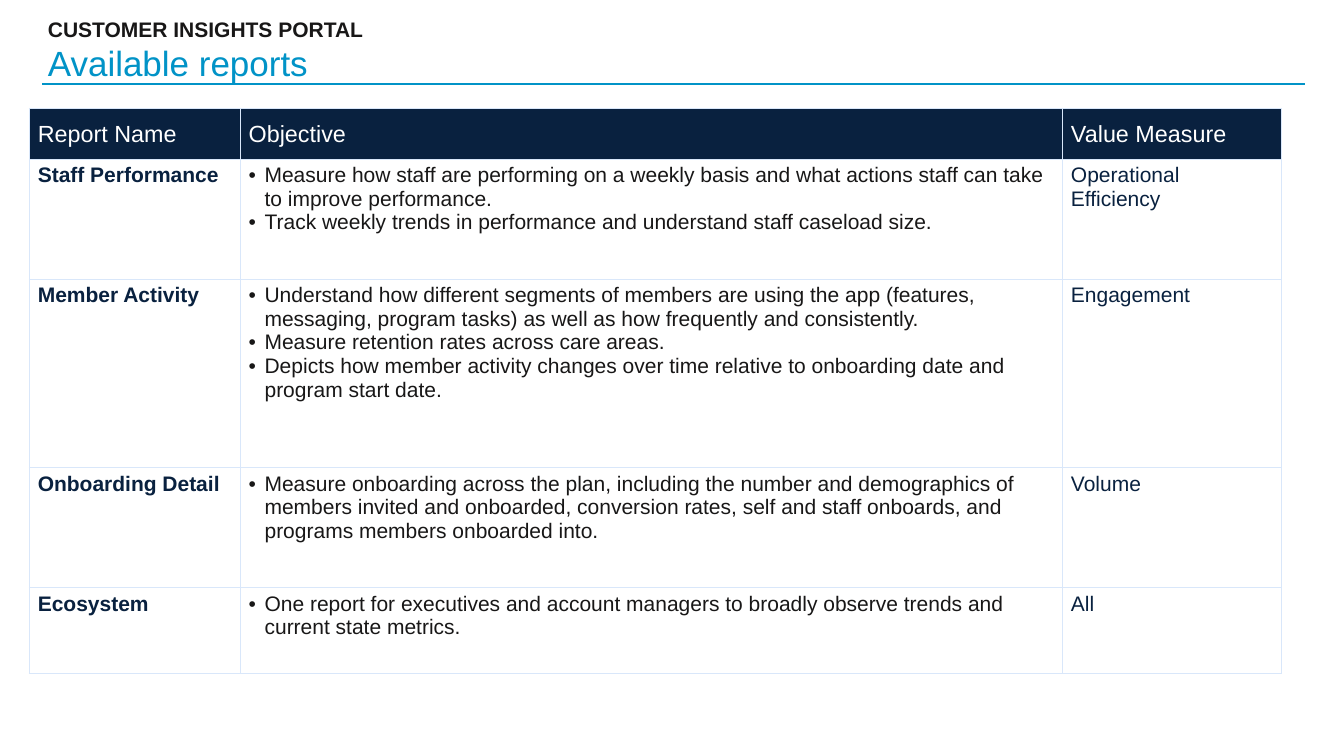
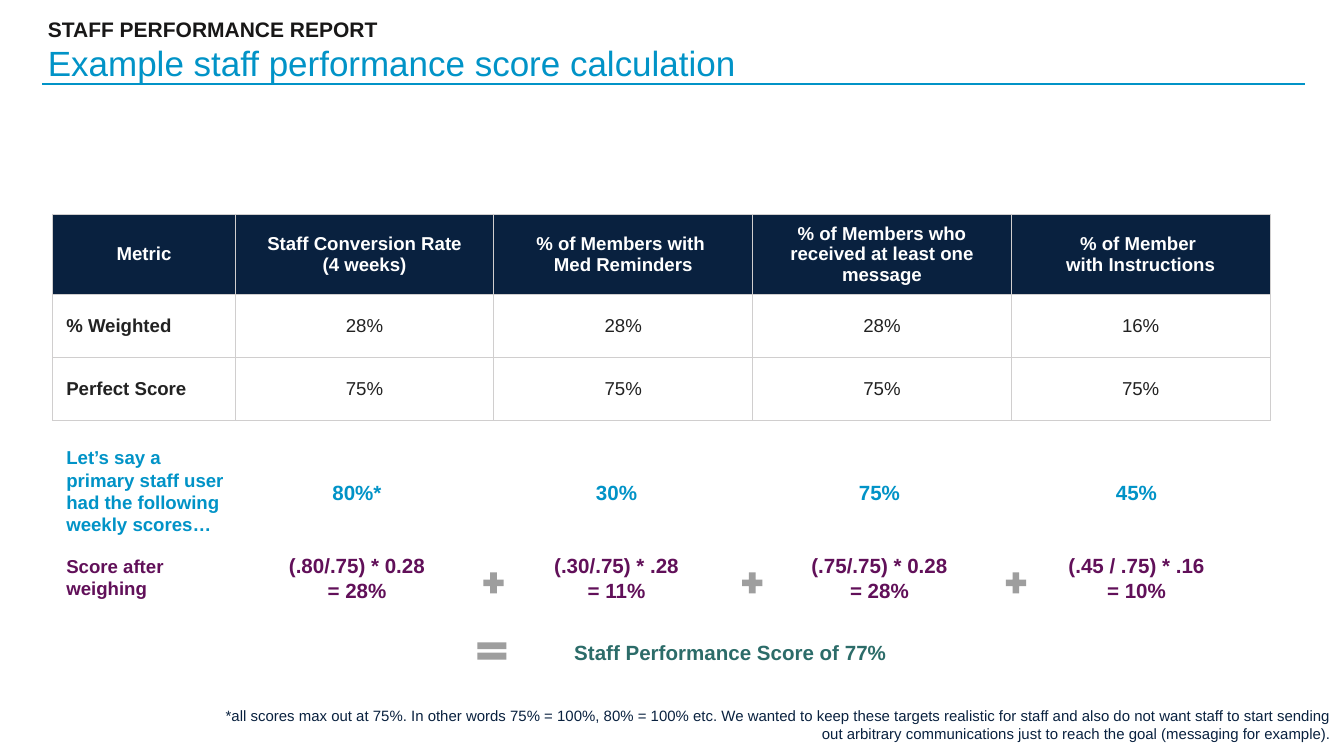
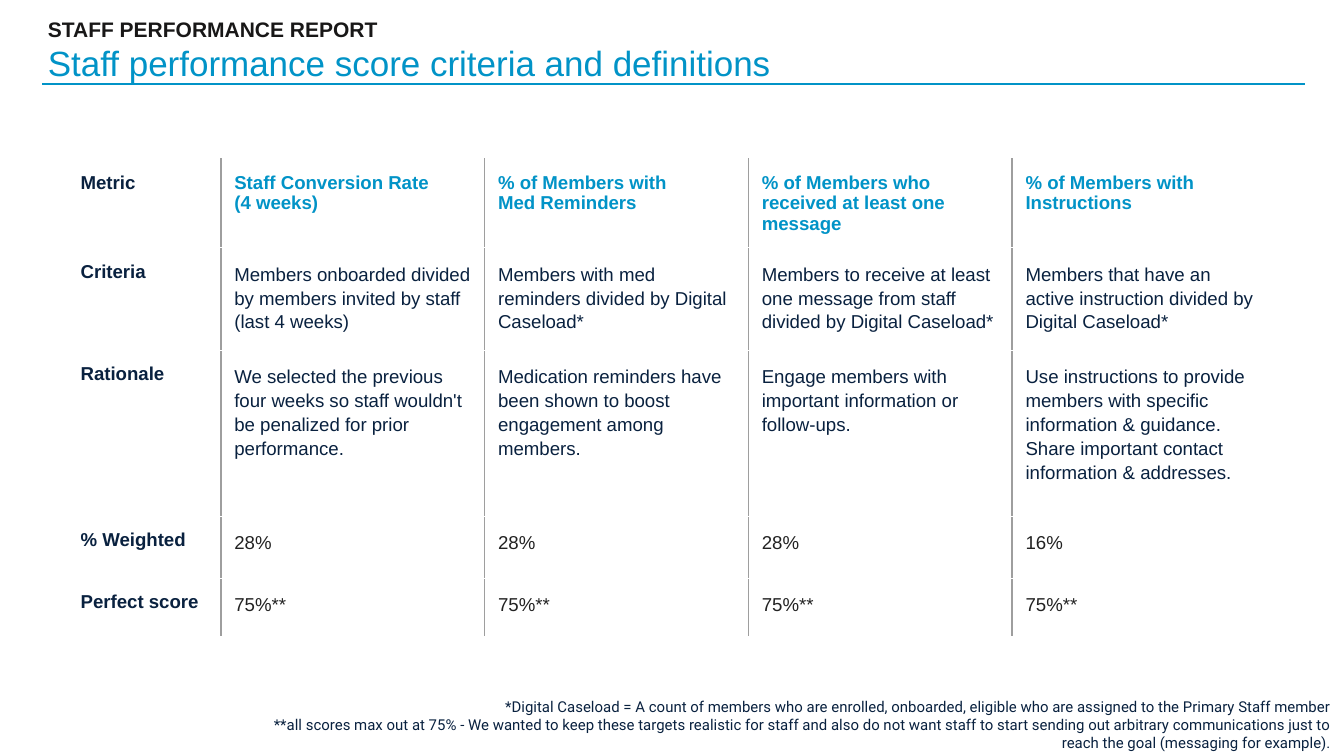
from collections.abc import Callable, Sequence
from copy import deepcopy
from dataclasses import dataclass

from lxml.etree import SubElement
from pptx import Presentation
from pptx.dml.color import RGBColor
from pptx.enum.shapes import MSO_CONNECTOR, MSO_SHAPE
from pptx.enum.text import MSO_ANCHOR, MSO_AUTO_SIZE, PP_ALIGN
from pptx.oxml.ns import qn
from pptx.presentation import Presentation as Deck
from pptx.slide import Slide
from pptx.table import _Cell as Cell
from pptx.text.text import TextFrame, _Paragraph as Paragraph
from pptx.util import Emu, Inches, Pt

GRID_COLUMNS = 16
GRID_ROWS = 9
SLIDE_WIDTH = Inches(16)
SLIDE_HEIGHT = Inches(9)


@dataclass(frozen=True)
class Theme:
    font: str = "Arial"
    note_font: str = "Roboto"
    ink: str = "181717"
    navy: str = "09213F"
    blue: str = "0193C7"
    plum: str = "611059"
    teal: str = "2C6C69"
    value: str = "222222"
    white: str = "FFFFFF"
    pale_blue: str = "D9E7FA"
    light_gray: str = "D0CECE"
    gray: str = "9E9E9E"
    title: float = 30
    heading: float = 20
    body: float = 18
    score: float = 17.6
    small: float = 16
    note: float = 12.8


THEME = Theme()


@dataclass(frozen=True)
class Area:
    left: float
    top: float
    width: float
    height: float

    def lengths(self) -> tuple[Emu, Emu, Emu, Emu]:
        return across(self.left), down(self.top), across(self.width), down(self.height)


@dataclass(frozen=True)
class Borders:
    outer: str
    vertical: str
    horizontal: str
    vertical_width: float = 1
    horizontal_width: float = 1


@dataclass(frozen=True)
class CellFormat:
    text: dict
    fill: str | None = None
    anchor: MSO_ANCHOR = MSO_ANCHOR.TOP


@dataclass(frozen=True)
class TablePlan:
    left: float
    top: float
    columns: Sequence[float]
    rows: Sequence[float]
    insets: tuple[float, float]
    borders: Borders
    cells: Sequence[Sequence[str | Sequence[str]]]
    cell_format: Callable[[int, int], CellFormat]


@dataclass(frozen=True)
class Score:
    center: float
    value: str
    formula: Sequence[str]


def across(columns: float) -> Emu:
    return Emu(round(SLIDE_WIDTH * columns / GRID_COLUMNS))


def down(rows: float) -> Emu:
    return Emu(round(SLIDE_HEIGHT * rows / GRID_ROWS))


def add_bullet(paragraph: Paragraph) -> None:
    properties = paragraph._p.get_or_add_pPr()
    properties.set("marL", str(Inches(0.19)))
    properties.set("indent", str(-Inches(0.19)))
    SubElement(properties, qn("a:buFont")).set("typeface", "Arial")
    SubElement(properties, qn("a:buChar")).set("char", "•")


def write_text(
    frame: TextFrame,
    text: str | Sequence[str],
    *,
    size: float,
    color: str,
    bold: bool = False,
    font: str = THEME.font,
    align: PP_ALIGN = PP_ALIGN.LEFT,
    spacing: float = 1,
    bullet: bool = False,
) -> None:
    for line in [text] if isinstance(text, str) else text:
        paragraph = frame.add_paragraph() if frame.text else frame.paragraphs[0]
        paragraph.text = line
        if bullet:
            add_bullet(paragraph)
        paragraph.alignment = align
        paragraph.line_spacing = spacing
        paragraph.space_before = Pt(0)
        for run in paragraph.runs:
            run.font.name = font
            run.font.size = Pt(size)
            run.font.bold = bold
            run.font.color.rgb = RGBColor.from_string(color)
        for line_break in paragraph._p.findall(qn("a:br")):
            line_break.insert(0, deepcopy(paragraph.runs[0]._r.rPr))


def add_text(
    slide: Slide,
    area: Area,
    text: str | Sequence[str],
    anchor: MSO_ANCHOR = MSO_ANCHOR.TOP,
    **text_format,
) -> None:
    frame = slide.shapes.add_textbox(*area.lengths()).text_frame
    frame.word_wrap = True
    frame.vertical_anchor = anchor
    frame.margin_left = frame.margin_right = Inches(0.16)
    frame.margin_top = frame.margin_bottom = Inches(0.16)
    write_text(frame, text, **text_format)


def add_titled_slide(presentation: Deck, kicker: str, title: str) -> Slide:
    slide = presentation.slides.add_slide(presentation.slide_layouts.get_by_name("Title Only"))
    rule = slide.shapes.add_connector(
        MSO_CONNECTOR.STRAIGHT, across(0.5), down(1), across(15.53), down(1)
    )
    rule.line.color.rgb = RGBColor.from_string(THEME.blue)
    rule.line.width = Pt(1.5)
    SubElement(rule._element.spPr, qn("a:effectLst"))

    placeholder = slide.shapes.title
    placeholder.left, placeholder.top, placeholder.width, placeholder.height = Area(
        0.47, 0.15, 13.46, 0.85
    ).lengths()
    frame = placeholder.text_frame
    frame.auto_size = MSO_AUTO_SIZE.NONE
    frame.word_wrap = True
    frame.vertical_anchor = MSO_ANCHOR.TOP
    write_text(frame, kicker, size=THEME.body, color=THEME.ink, bold=True)
    write_text(frame, title, size=THEME.title, color=THEME.blue)
    return slide


def set_border(cell: Cell, side: str, color: str, width: float) -> None:
    line = SubElement(cell._tc.get_or_add_tcPr(), qn(f"a:ln{side}"))
    line.set("w", str(Pt(width)))
    fill = SubElement(line, qn("a:solidFill"))
    SubElement(fill, qn("a:srgbClr")).set("val", color)


def add_table(slide: Slide, plan: TablePlan) -> None:
    area = Area(plan.left, plan.top, sum(plan.columns), sum(plan.rows))
    last_row, last_column = len(plan.rows) - 1, len(plan.columns) - 1
    table = slide.shapes.add_table(last_row + 1, last_column + 1, *area.lengths()).table
    table.first_row = table.horz_banding = False
    for column, width in zip(table.columns, plan.columns):
        column.width = across(width)
    for row, height in zip(table.rows, plan.rows):
        row.height = down(height)

    borders = plan.borders
    for row_index, texts in enumerate(plan.cells):
        for column_index, text in enumerate(texts):
            cell = table.cell(row_index, column_index)
            cell_format = plan.cell_format(row_index, column_index)
            for side, at_edge, inner, width in (
                ("L", column_index == 0, borders.vertical, borders.vertical_width),
                ("R", column_index == last_column, borders.vertical, borders.vertical_width),
                ("T", row_index == 0, borders.horizontal, borders.horizontal_width),
                ("B", row_index == last_row, borders.horizontal, borders.horizontal_width),
            ):
                set_border(cell, side, borders.outer if at_edge else inner, width)
            if cell_format.fill:
                cell.fill.solid()
                cell.fill.fore_color.rgb = RGBColor.from_string(cell_format.fill)
            else:
                cell.fill.background()
            cell.vertical_anchor = cell_format.anchor
            cell.margin_left = cell.margin_right = Inches(plan.insets[0])
            cell.margin_top = cell.margin_bottom = Inches(plan.insets[1])
            write_text(cell.text_frame, text, **cell_format.text)


def add_symbol(
    slide: Slide, kind: MSO_SHAPE, area: Area, adjustments: Sequence[float]
) -> None:
    symbol = slide.shapes.add_shape(kind, *area.lengths())
    symbol.shadow.inherit = False
    symbol.fill.solid()
    symbol.fill.fore_color.rgb = RGBColor.from_string(THEME.gray)
    symbol.line.fill.background()
    for index, adjustment in enumerate(adjustments):
        symbol.adjustments[index] = adjustment


def report_cell(row: int, column: int) -> CellFormat:
    if row == 0:
        header = dict(size=THEME.heading, color=THEME.white)
        return CellFormat(header, THEME.navy, MSO_ANCHOR.MIDDLE)
    objective = column == 1
    color = THEME.ink if objective else THEME.navy
    return CellFormat(dict(size=THEME.body, color=color, bold=column == 0, bullet=objective))


def weight_cell(row: int, column: int) -> CellFormat:
    header, label = row == 0, column == 0
    text = dict(
        size=THEME.small,
        color=THEME.white if header else THEME.value,
        bold=header or label,
        align=PP_ALIGN.LEFT if label and not header else PP_ALIGN.CENTER,
    )
    return CellFormat(text, THEME.navy if header else None, MSO_ANCHOR.MIDDLE)


def criteria_cell(row: int, column: int) -> CellFormat:
    if column == 0:
        return CellFormat(dict(size=THEME.small, color=THEME.navy, bold=True))
    if row == 0:
        return CellFormat(dict(size=THEME.small, color=THEME.blue, bold=True))
    color = THEME.navy if row < 3 else THEME.value
    return CellFormat(dict(size=THEME.small, color=color, spacing=1.15))


REPORTS = TablePlan(
    0.35, 1.29, (2.51, 9.79, 2.61), (0.61, 1.43, 2.24, 1.43, 1.02), (0.1, 0.05),
    Borders(THEME.pale_blue, THEME.pale_blue, THEME.pale_blue),
    (
        ("Report Name", "Objective", "Value Measure"),
        ("Staff Performance", (
            "Measure how staff are performing on a weekly basis and what actions staff can take to improve performance.",
            "Track weekly trends in performance and understand staff caseload size.",
        ), "Operational Efficiency"),
        ("Member Activity", (
            "Understand how different segments of members are using the app (features, messaging, program tasks) as well as how frequently and consistently.",
            "Measure retention rates across care areas.",
            "Depicts how member activity changes over time relative to onboarding date and program start date.",
        ), "Engagement"),
        ("Onboarding Detail", "Measure onboarding across the plan, including the number and demographics of members invited and onboarded, conversion rates, self and staff onboards, and programs members onboarded into.", "Volume"),
        ("Ecosystem", "One report for executives and account managers to broadly observe trends and current state metrics.", "All"),
    ),
    report_cell,
)

WEIGHTS = ("28%", "28%", "28%", "16%")

SCORE_WEIGHTS = TablePlan(
    0.63, 2.55, (2.17, *[3.08] * 4), (0.96, 0.75, 0.75), (0.16, 0.08),
    Borders(THEME.light_gray, THEME.light_gray, THEME.light_gray),
    (
        (
            "Metric",
            "Staff Conversion Rate\n(4 weeks)",
            "% of Members with \nMed Reminders",
            "% of Members who received at least one message",
            "% of Member \nwith Instructions",
        ),
        ("% Weighted", *WEIGHTS),
        ("Perfect Score", *["75%"] * 4),
    ),
    weight_cell,
)

SCORES = (
    Score(4.25, "80%*", ("(.80/.75) * 0.28", "= 28%")),
    Score(7.34, "30%", ("(.30/.75) * .28", "= 11%")),
    Score(10.47, "75%", ("(.75/.75) * 0.28", "= 28%")),
    Score(13.53, "45%", ("(.45 / .75) * .16", "= 10%")),
)

CRITERIA = TablePlan(
    0.8, 1.89, (1.83, *[3.14] * 4), (0.85, 1.22, 1.98, 0.73, 0.69), (0.16, 0.16),
    Borders(THEME.white, THEME.gray, THEME.white, 1.5, 0.75),
    (
        (
            "Metric",
            "Staff Conversion Rate \n(4 weeks)",
            "% of Members with \nMed Reminders",
            "% of Members who received at least one message",
            "% of Members with Instructions",
        ),
        (
            "Criteria",
            "Members onboarded divided by members invited by staff (last 4 weeks)",
            "Members with med reminders divided by Digital Caseload*",
            "Members to receive at least one message from staff divided by Digital Caseload*",
            "Members that have an active instruction divided by Digital Caseload*",
        ),
        (
            "Rationale",
            "We selected the previous four weeks so staff wouldn't be penalized for prior performance.",
            "Medication reminders have been shown to boost engagement among members.",
            "Engage members with important information or follow-ups.",
            "Use instructions to provide members with specific information & guidance. Share important contact information & addresses.",
        ),
        ("% Weighted", *WEIGHTS),
        ("Perfect score", *["75%**"] * 4),
    ),
    criteria_cell,
)


def build_reports(presentation: Deck) -> None:
    slide = add_titled_slide(presentation, "CUSTOMER INSIGHTS PORTAL", "Available reports")
    add_table(slide, REPORTS)


def build_calculation(presentation: Deck) -> None:
    slide = add_titled_slide(
        presentation, "STAFF PERFORMANCE REPORT", "Example staff performance score calculation"
    )
    add_table(slide, SCORE_WEIGHTS)
    label = dict(size=THEME.small, bold=True)
    add_text(
        slide, Area(0.63, 5.15, 2.25, 1.4),
        "Let’s say a primary staff user had the following weekly scores…",
        color=THEME.blue, **label,
    )
    add_text(slide, Area(0.63, 6.44, 2.25, 0.86), "Score after weighing", color=THEME.plum, **label)

    result = dict(
        size=THEME.score, bold=True, align=PP_ALIGN.CENTER, anchor=MSO_ANCHOR.MIDDLE
    )
    for score in SCORES:
        for text, top, width, color in (
            (score.value, 5.58, 1.24, THEME.blue),
            (score.formula, 6.6, 2.25, THEME.plum),
        ):
            area = Area(score.center - width / 2, top, width, 0.55)
            add_text(slide, area, text, color=color, **result)
    for left in (5.71, 8.79, 11.93):
        add_symbol(slide, MSO_SHAPE.MATH_PLUS, Area(left, 6.77, 0.33, 0.34), (0.24,))
    add_symbol(slide, MSO_SHAPE.MATH_EQUAL, Area(5.62, 7.58, 0.47, 0.34), (0.24, 0.12))
    add_text(
        slide, Area(6.41, 7.49, 4.57, 0.55), "Staff Performance Score of 77%",
        color=THEME.teal, **result,
    )
    add_text(
        slide, Area(2.45, 8.25, 13.55, 0.75),
        "*all scores max out at 75%. In other words 75% = 100%, 80% = 100% etc. We wanted to keep these targets realistic for staff and also do not want staff to start sending out arbitrary communications just to reach the goal (messaging for example).",
        size=THEME.note, color=THEME.navy, align=PP_ALIGN.RIGHT,
    )


def build_criteria(presentation: Deck) -> None:
    slide = add_titled_slide(
        presentation, "STAFF PERFORMANCE REPORT", "Staff performance score criteria and definitions"
    )
    add_table(slide, CRITERIA)
    add_text(
        slide, Area(2.7, 8.15, 13.3, 0.97),
        (
            "*Digital Caseload = A count of members who are enrolled, onboarded, eligible who are assigned to the Primary Staff member",
            "**all scores max out at 75% - We wanted to keep these targets realistic for staff and also do not want staff to start sending out arbitrary communications just to reach the goal (messaging for example).",
        ),
        size=THEME.note, color=THEME.navy, font=THEME.note_font, align=PP_ALIGN.RIGHT,
    )


def main() -> None:
    presentation = Presentation()
    presentation.slide_width = SLIDE_WIDTH
    presentation.slide_height = SLIDE_HEIGHT
    for build in (build_reports, build_calculation, build_criteria):
        build(presentation)
    presentation.save("out.pptx")


if __name__ == "__main__":
    main()
